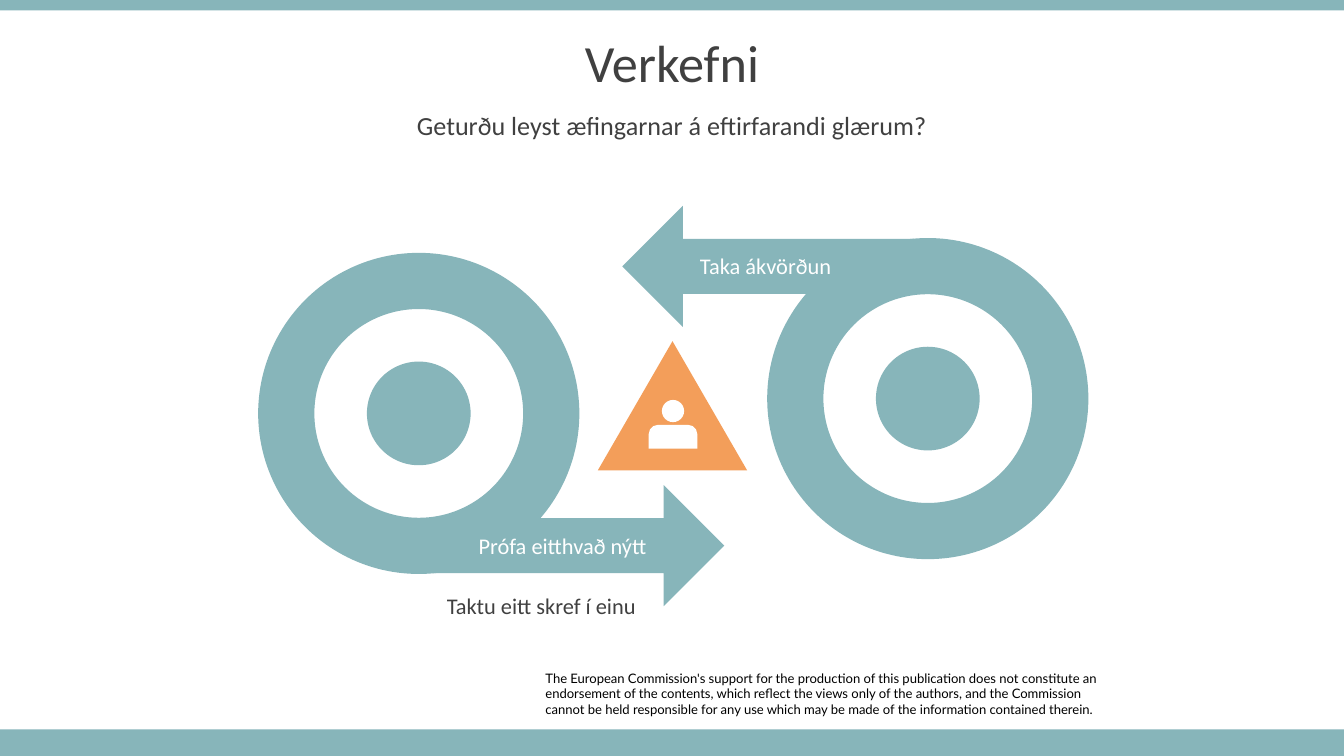
from pptx import Presentation
from pptx.dml.color import RGBColor
from pptx.enum.shapes import MSO_SHAPE
from pptx.enum.text import MSO_ANCHOR, PP_ALIGN
from pptx.util import Cm, Pt

RECT, DONUT, OVAL = MSO_SHAPE.RECTANGLE, MSO_SHAPE.DONUT, MSO_SHAPE.OVAL
ARROW, TRIANGLE = MSO_SHAPE.RIGHT_ARROW, MSO_SHAPE.ISOSCELES_TRIANGLE
SHOULDERS = MSO_SHAPE.ROUND_2_SAME_RECTANGLE
LEFT, CENTER, RIGHT = PP_ALIGN.LEFT, PP_ALIGN.CENTER, PP_ALIGN.RIGHT
TOP, MIDDLE = MSO_ANCHOR.TOP, MSO_ANCHOR.MIDDLE

COLORS = {"teal": "87B5BA", "orange": "F39E5A", "white": "FFFFFF",
          "gray": "404040", "black": "000000"}
WIDTH, HEIGHT = 25.4, 14.29

deck = Presentation()
deck.slide_width, deck.slide_height = Cm(WIDTH), Cm(HEIGHT)
page = deck.slides.add_slide(deck.slide_layouts[6])


def add_solid(kind, left, top, width, height, color, adjustments=()):
    shape = page.shapes.add_shape(kind, Cm(left), Cm(top), Cm(width), Cm(height))
    shape.shadow.inherit = False
    shape.fill.solid()
    shape.fill.fore_color.rgb = RGBColor.from_string(COLORS[color])
    shape.line.fill.background()
    for index, value in enumerate(adjustments):
        shape.adjustments[index] = value
    return shape


def add_text(left, top, width, height, lines, size, color, align=LEFT,
             anchor=TOP, font="Calibri"):
    box = page.shapes.add_textbox(Cm(left), Cm(top), Cm(width), Cm(height))
    frame = box.text_frame
    frame.word_wrap = True
    frame.vertical_anchor = anchor
    for index, line in enumerate(lines):
        para = frame.add_paragraph() if index else frame.paragraphs[0]
        para.alignment = align
        span = para.add_run()
        span.text = line
        span.font.name = font
        span.font.size = Pt(size)
        span.font.color.rgb = RGBColor.from_string(COLORS[color])
    return frame


# Bands and disclaimer
add_solid(RECT, 0, 13.79, WIDTH, 0.5, "teal")
add_solid(RECT, 0, 0, WIDTH, 0.2, "teal")
disclaimer = add_text(10.31, 12.67, 10.59, 0.89, [
    "The European Commission's support for the production of this publication "
    "does not constitute an endorsement of the contents, which reflect the "
    "views only of the authors, and the Commission",
    "cannot be held responsible for any use which may be made of the "
    "information contained therein.",
], 7, "black", font="Lato")
disclaimer.margin_left = disclaimer.margin_right = 0
disclaimer.margin_top = disclaimer.margin_bottom = 0

# Title and question
add_text(0, 0.36, WIDTH, 1.6, ["Verkefni"], 28, "gray", CENTER, MIDDLE)
add_text(0, 1.96, WIDTH, 0.79, ["Geturðu leyst æfingarnar á eftirfarandi glærum?"],
         14, "gray", CENTER, MIDDLE)

# Two wheels with arrows; the second is the first turned half round
RING, DOT = 6.07, 1.96
ARROW_WIDTH, ARROW_HEIGHT = 5.51, 2.29
ARROW_DX, ARROW_DY = 3.3, 4.39
for left, top, turned in [(4.88, 4.78, False), (14.5, 4.5, True)]:
    add_solid(DONUT, left, top, RING, RING, "teal", [0.175])
    dx = RING - ARROW_DX - ARROW_WIDTH if turned else ARROW_DX
    dy = RING - ARROW_DY - ARROW_HEIGHT if turned else ARROW_DY
    arrow = add_solid(ARROW, left + dx, top + dy, ARROW_WIDTH, ARROW_HEIGHT,
                      "teal", [0.455, 0.5])
    arrow.rotation = 180 if turned else 0
    inset = (RING - DOT) / 2
    add_solid(OVAL, left + inset, top + inset, DOT, DOT, "teal")

# Triangle with person icon
add_solid(TRIANGLE, 11.3, 6.45, 2.82, 2.44, "orange")
add_solid(SHOULDERS, 12.26, 8.03, 0.92, 0.45, "white", [0.4, 0])
add_solid(OVAL, 12.51, 7.56, 0.42, 0.42, "white")

# Labels
for left, top, width, label, color, align in [
    (1.07, 11.07, 11.2, "Taktu eitt skref í einu", "gray", RIGHT),
    (5.97, 9.93, 6.5, "Prófa eitthvað nýtt", "white", RIGHT),
    (12.98, 4.65, 6.5, "Taka ákvörðun", "white", LEFT),
]:
    add_text(left, top, width, 0.76, [label], 12, color, align)

deck.save("out.pptx")
